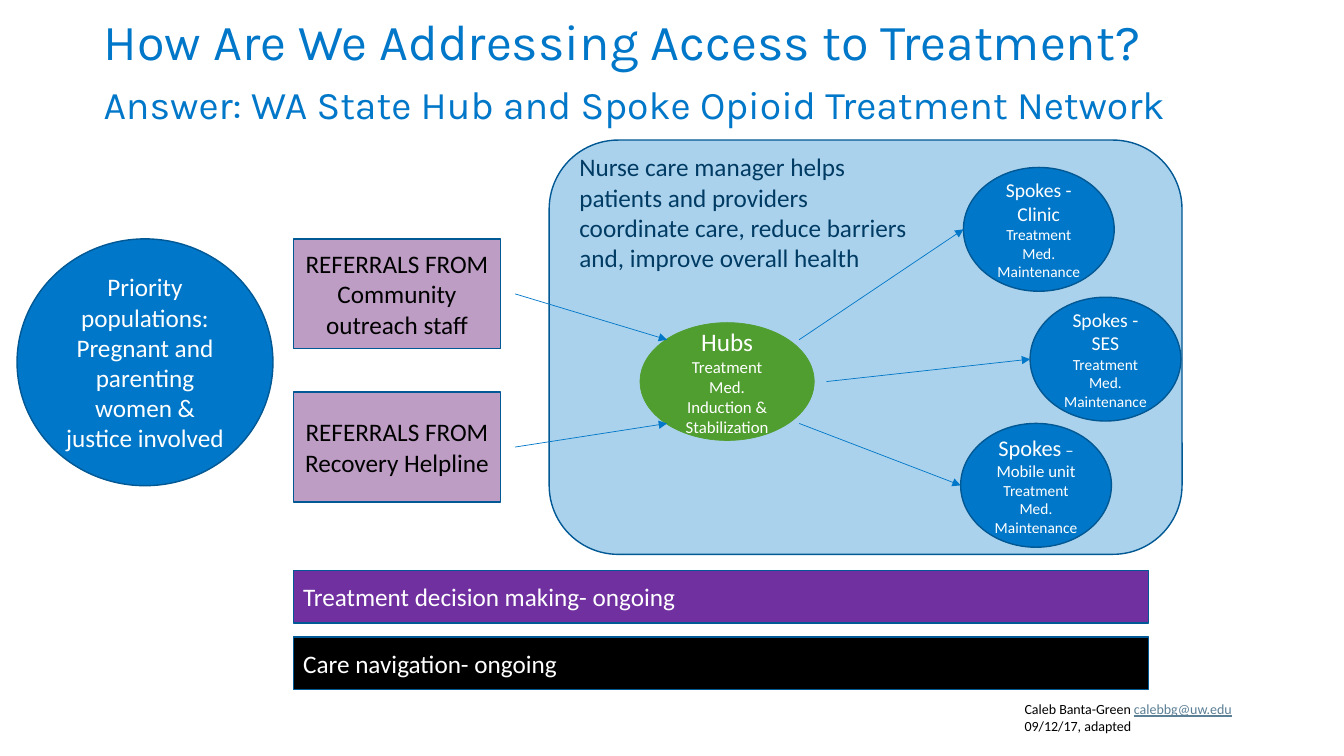
from dataclasses import dataclass

from lxml import etree
from pptx import Presentation
from pptx.dml.color import RGBColor
from pptx.enum.shapes import MSO_CONNECTOR, MSO_SHAPE
from pptx.enum.text import MSO_ANCHOR, PP_ALIGN
from pptx.oxml.ns import qn
from pptx.slide import Slide
from pptx.text.text import TextFrame
from pptx.util import Cm, Pt

RECT, ROUND, OVAL = MSO_SHAPE.RECTANGLE, MSO_SHAPE.ROUNDED_RECTANGLE, MSO_SHAPE.OVAL
LEFT, CENTER = PP_ALIGN.LEFT, PP_ALIGN.CENTER
TOP, MIDDLE = MSO_ANCHOR.TOP, MSO_ANCHOR.MIDDLE
STRAIGHT = MSO_CONNECTOR.STRAIGHT


@dataclass(frozen=True)
class Theme:
    blue: str = "0077C8"
    edge: str = "005894"
    navy: str = "003B64"
    green: str = "509E2F"
    mauve: str = "BE9DC5"
    purple: str = "7030A0"
    slate: str = "5B7F95"
    black: str = "000000"
    white: str = "FFFFFF"
    head: str = "Karla"
    body: str = "Calibri"
    title: int = 36
    answer: int = 28
    main: int = 18
    mobile: int = 16
    spoke: int = 14
    hub: int = 12
    small: int = 11
    credit: int = 10


THEME = Theme()


@dataclass(frozen=True)
class Run:
    text: str
    size: int = THEME.main
    color: str = THEME.white
    under: bool = False


Lines = list[list[Run]]
Point = tuple[float, float]


@dataclass(frozen=True)
class Box:
    kind: MSO_SHAPE
    left: float
    top: float
    width: float
    height: float
    fill: str
    lines: Lines
    align: PP_ALIGN = CENTER
    edge: str = THEME.edge
    weight: float = 1
    alpha: int = 100

    @property
    def middle(self) -> float:
        return self.top + self.height / 2


def write(frame: TextFrame, lines: Lines, align: PP_ALIGN, font: str) -> None:
    frame.word_wrap = True
    for index, line in enumerate(lines):
        para = frame.add_paragraph() if index else frame.paragraphs[0]
        para.text = line[0].text
        para.alignment = align
        for part in line[1:]:
            para.add_run().text = part.text
        for run, part in zip(para.runs, line):
            run.font.name = font
            run.font.size = Pt(part.size)
            run.font.color.rgb = RGBColor.from_string(part.color)
            run.font.underline = part.under


def draw_box(slide: Slide, box: Box) -> None:
    shape = slide.shapes.add_shape(
        box.kind, Cm(box.left), Cm(box.top), Cm(box.width), Cm(box.height))
    shape.shadow.inherit = False
    shape.fill.solid()
    shape.fill.fore_color.rgb = RGBColor.from_string(box.fill)
    if box.alpha < 100:
        color = shape.fill._xPr.find(qn("a:solidFill"))[0]
        etree.SubElement(color, qn("a:alpha"), val=str(box.alpha * 1000))
    shape.line.color.rgb = RGBColor.from_string(box.edge)
    shape.line.width = Pt(box.weight)
    shape.text_frame.vertical_anchor = MIDDLE
    if box.lines:
        write(shape.text_frame, box.lines, box.align, THEME.body)


def draw_text(slide: Slide, left: float, top: float, width: float, height: float,
              lines: Lines, font: str = THEME.body) -> TextFrame:
    frame = slide.shapes.add_textbox(
        Cm(left), Cm(top), Cm(width), Cm(height)).text_frame
    frame.vertical_anchor = TOP
    write(frame, lines, LEFT, font)
    return frame


def draw_arrow(slide: Slide, start: Point, end: Point) -> None:
    arrow = slide.shapes.add_connector(
        STRAIGHT, Cm(start[0]), Cm(start[1]), Cm(end[0]), Cm(end[1]))
    arrow.line.color.rgb = RGBColor.from_string(THEME.blue)
    arrow.line.width = Pt(0.5)
    etree.SubElement(arrow.line._get_or_add_ln(), qn("a:tailEnd"), type="triangle")
    etree.SubElement(arrow._element.spPr, qn("a:effectLst"))


def make_spoke(left: float, top: float, name: list[Run]) -> Box:
    care = [Run("Treatment Med. Maintenance", THEME.small)]
    return Box(OVAL, left, top, 3.8, 3.12, THEME.blue, [name, care])


def make_source(top: float, name: str) -> Box:
    lines = [[Run(text, color=THEME.black)] for text in ("REFERRALS FROM", name)]
    return Box(RECT, 7.39, top, 5.23, 2.77, THEME.mauve, lines)


def make_bar(top: float, fill: str, text: str) -> Box:
    return Box(RECT, 7.39, top, 21.56, 1.32, fill, [[Run(text)]], LEFT)


def main() -> None:
    deck = Presentation()
    deck.slide_width, deck.slide_height = Cm(33.87), Cm(19.05)
    slide = deck.slides.add_slide(deck.slide_layouts[6])

    panel = Box(ROUND, 13.84, 3.53, 15.95, 10.44, THEME.blue, [], alpha=33)
    group = Box(OVAL, 0.43, 6.02, 6.45, 6.22, THEME.blue, [[Run(
        "Priority populations: Pregnant and parenting women & justice involved")]])
    hub = Box(OVAL, 16.13, 8.13, 4.39, 2.97, THEME.green, [
        [Run("Hubs")],
        [Run("Treatment Med.", THEME.hub)],
        [Run("Induction & Stabilization", THEME.hub)],
    ], edge=THEME.green, weight=0.5)
    spokes = [
        make_spoke(24.28, 4.22, [Run("Spokes - Clinic", THEME.spoke)]),
        make_spoke(25.96, 7.49, [Run("Spokes - SES", THEME.spoke)]),
        make_spoke(24.21, 10.67, [Run("Spokes", THEME.mobile),
                                  Run(" – Mobile unit", THEME.hub)]),
    ]
    sources = [make_source(6.02, "Community outreach staff"),
               make_source(9.88, "Recovery Helpline")]
    bars = [make_bar(14.38, THEME.purple, "Treatment decision making- ongoing"),
            make_bar(16.05, THEME.black, "Care navigation- ongoing")]
    for box in [panel, group, hub, *spokes, *sources, *bars]:
        draw_box(slide, box)

    upper, lower = 8.56, 10.67
    exits = [(20.14, upper), (20.83, hub.middle), (20.14, lower)]
    for start, spoke in zip(exits, spokes):
        draw_arrow(slide, start, (spoke.left, spoke.middle))
    for source, entry in zip(sources, (upper, lower)):
        draw_arrow(slide, (12.98, source.middle), (16.81, entry))

    title = draw_text(slide, 2.36, 0.3, 29.18, 3.33, [
        [Run("How Are We Addressing Access to Treatment?", THEME.title, THEME.blue)],
        [Run("Answer: WA State Hub and Spoke Opioid Treatment Network",
             THEME.answer, THEME.blue)],
    ], THEME.head)
    for para in title.paragraphs:
        para.line_spacing = 0.9
    title.paragraphs[1].space_before = Pt(10)

    notes = ("Nurse care manager helps", "patients and providers",
             "coordinate care, reduce barriers", "and, improve overall health")
    draw_text(slide, 14.35, 3.7, 9.5, 3.36,
              [[Run(text, color=THEME.navy)] for text in notes])
    draw_text(slide, 25.57, 17.53, 5.79, 1.12, [
        [Run("Caleb Banta-Green ", THEME.credit, THEME.black),
         Run("calebbg@uw.edu", THEME.credit, THEME.slate, True)],
        [Run("09/12/17, adapted", THEME.credit, THEME.black)],
    ])
    deck.save("out.pptx")


if __name__ == "__main__":
    main()
